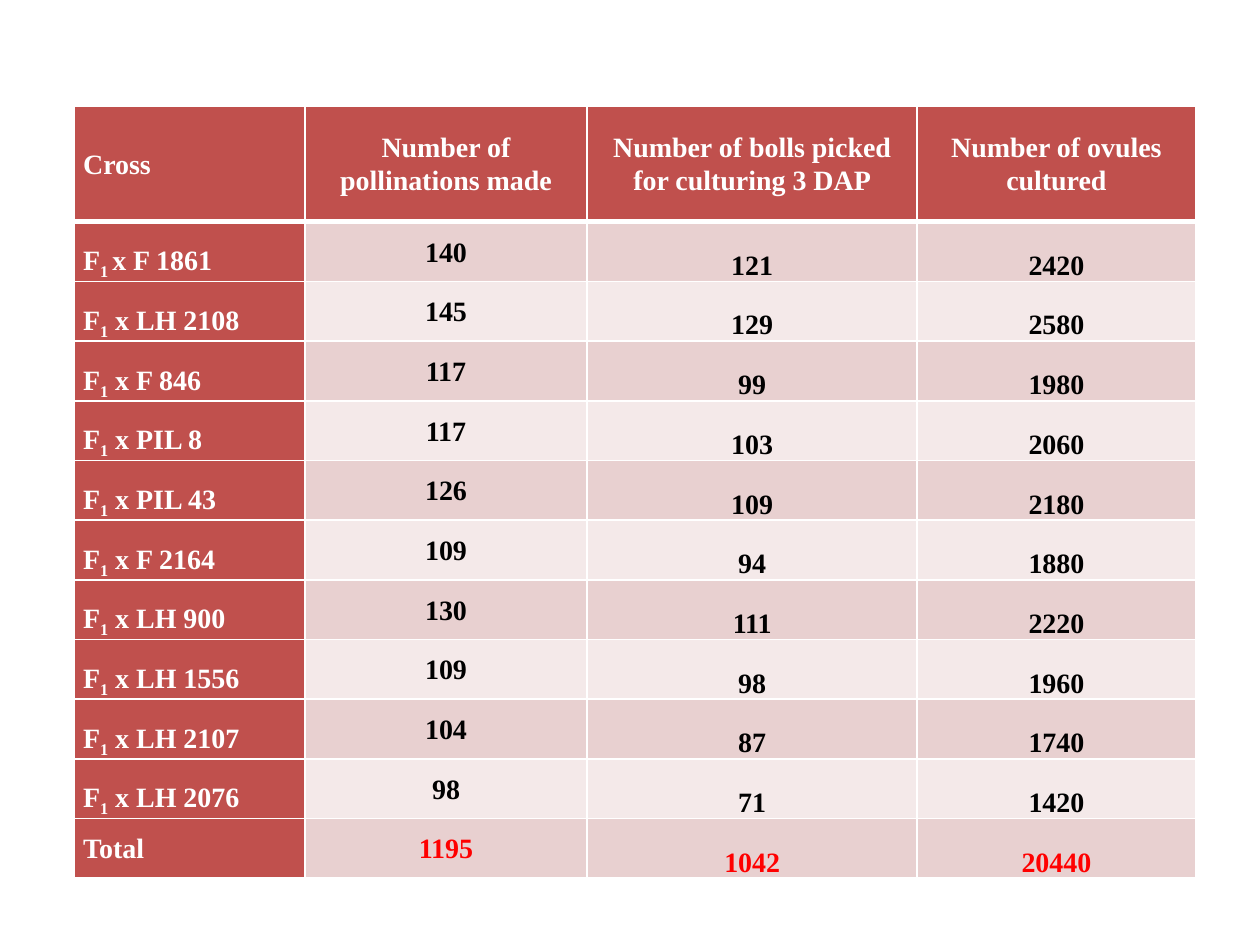
from dataclasses import dataclass

from lxml.etree import SubElement
from pptx import Presentation
from pptx.dml.color import RGBColor as RGB
from pptx.enum.text import MSO_ANCHOR as ANCHOR, PP_ALIGN as ALIGN
from pptx.oxml.ns import qn
from pptx.util import Inches, Pt

HEADERS = ["Cross", "Number of pollinations made",
           "Number of bolls picked for culturing 3 DAP", "Number of ovules cultured"]
# The part of a cross name between underscores is subscript.
CROSSES = [
    ("F_1 _x F 1861", 140, 121, 2420),
    ("F_1_ x LH 2108", 145, 129, 2580),
    ("F_1_ x F 846", 117, 99, 1980),
    ("F_1_ x PIL 8", 117, 103, 2060),
    ("F_1_ x PIL 43", 126, 109, 2180),
    ("F_1_ x F 2164", 109, 94, 1880),
    ("F_1_ x LH 900", 130, 111, 2220),
    ("F_1_ x LH 1556", 109, 98, 1960),
    ("F_1_ x LH 2107", 104, 87, 1740),
    ("F_1_ x LH 2076", 98, 71, 1420),
]
TOTALS = ("Total", 1195, 1042, 20440)
ROWS = [HEADERS, *CROSSES, TOTALS]

LEFT, TOP = 0.59, 0.84
COL_WIDTHS = [1.83, 2.24, 2.62, 2.21]
ROW_HEIGHTS = [0.92] + [0.474] * (len(ROWS) - 1)


@dataclass(frozen=True)
class Theme:
    font: str = "Times New Roman"
    size: int = 16
    line_spacing: float = 1.07
    head: str = "C0504D"
    bands: tuple = ("E8D0D0", "F4E9E9")
    light: str = "FFFFFF"
    dark: str = "000000"
    total: str = "FF0000"
    border: int = 1
    head_border: int = 3


THEME = Theme()


def set_borders(cell, bottom):
    tc_pr = cell._tc.get_or_add_tcPr()
    widths = {"lnL": THEME.border, "lnR": THEME.border, "lnT": THEME.border, "lnB": bottom}
    for tag, width in widths.items():
        ln = SubElement(tc_pr, qn(f"a:{tag}"), w=str(Pt(width)))
        fill = SubElement(ln, qn("a:solidFill"))
        SubElement(fill, qn("a:srgbClr"), val=THEME.light)


def cell_look(row, col):
    """Return fill colour, text colour and anchor for a table position."""
    is_head, is_total = row == 0, row == len(ROWS) - 1
    middle = is_head or col == 1 or (is_total and col == 0)
    anchor = ANCHOR.MIDDLE if middle else ANCHOR.BOTTOM
    if is_head or col == 0:
        return THEME.head, THEME.light, anchor
    return THEME.bands[(row - 1) % 2], THEME.total if is_total else THEME.dark, anchor


def fill_cell(cell, row, col, value):
    fill, color, anchor = cell_look(row, col)
    set_borders(cell, THEME.border if row else THEME.head_border)
    cell.fill.solid()
    cell.fill.fore_color.rgb = RGB.from_string(fill)
    cell.vertical_anchor = anchor
    cell.margin_left = cell.margin_right = Inches(0.07)
    cell.margin_top = cell.margin_bottom = 0

    p = cell.text_frame.paragraphs[0]
    p.alignment = ALIGN.CENTER if col else ALIGN.LEFT
    p.line_spacing = THEME.line_spacing
    for i, text in enumerate(str(value).split("_")):
        r = p.add_run()
        r.text = text
        r.font.name, r.font.size, r.font.bold = THEME.font, Pt(THEME.size), True
        r.font.color.rgb = RGB.from_string(color)
        if i == 1:
            r.font._element.set("baseline", "-25000")


def main():
    prs = Presentation()
    prs.slide_width, prs.slide_height = Inches(10), Inches(7.5)
    s = prs.slides.add_slide(prs.slide_layouts[6])
    table = s.shapes.add_table(
        len(ROWS), len(HEADERS), Inches(LEFT), Inches(TOP),
        Inches(sum(COL_WIDTHS)), Inches(sum(ROW_HEIGHTS))).table
    for column, width in zip(table.columns, COL_WIDTHS):
        column.width = Inches(width)
    for row, height in zip(table.rows, ROW_HEIGHTS):
        row.height = Inches(height)
    for i, values in enumerate(ROWS):
        for j, value in enumerate(values):
            fill_cell(table.cell(i, j), i, j, value)
    prs.save("out.pptx")


if __name__ == "__main__":
    main()
